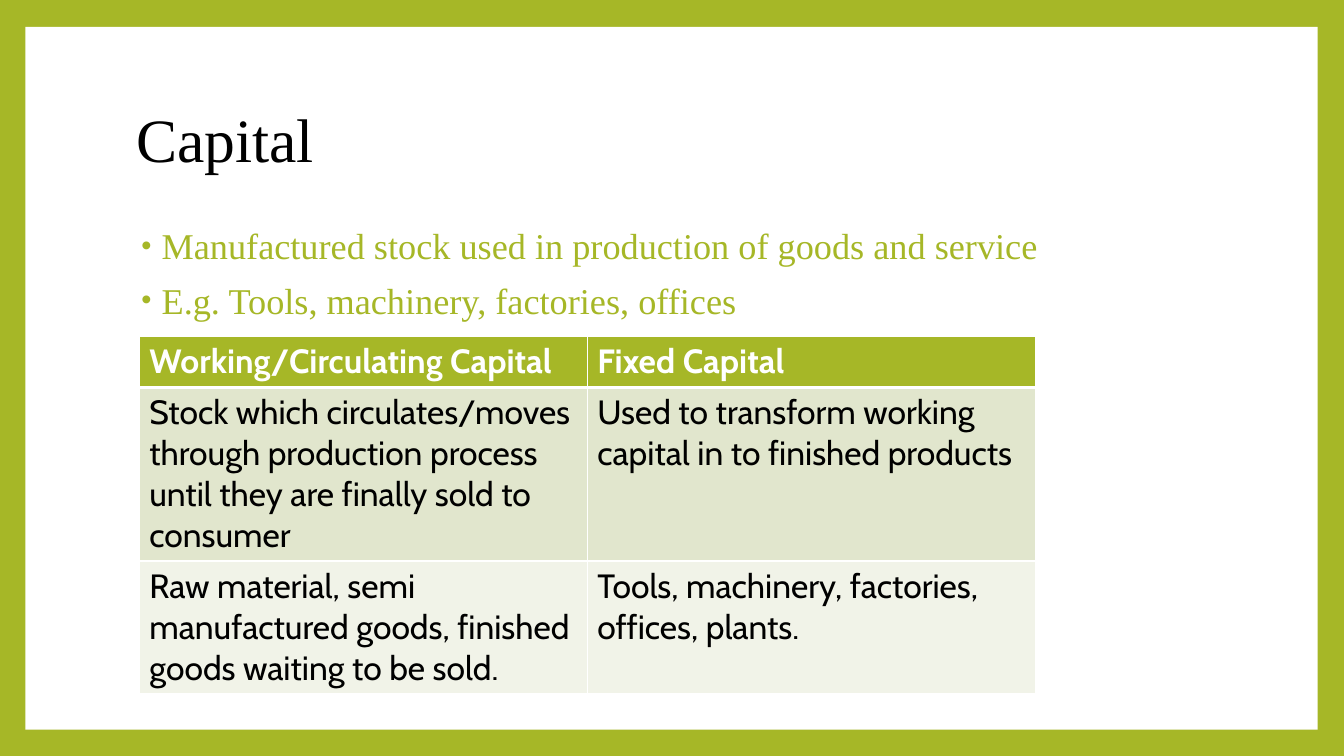
from lxml.etree import SubElement as Sub
from pptx import Presentation
from pptx.dml.color import RGBColor
from pptx.enum.shapes import MSO_SHAPE as Shape
from pptx.enum.text import MSO_ANCHOR as Anchor, MSO_AUTO_SIZE as Fit, PP_ALIGN as Align
from pptx.oxml.ns import qn
from pptx.util import Cm, Pt

GREEN, WHITE, BLACK = "A6B727", "FFFFFF", "000000"
SERIF, SANS = "Times New Roman", "Cabin"

TITLE = "Capital"
POINTS = [
    "Manufactured stock used in production of goods and service",
    "E.g. Tools, machinery, factories, offices",
]
ROWS = [
    ("Working/Circulating Capital", "Fixed Capital"),
    ("Stock which circulates/moves through production process until they are finally sold to consumer",
     "Used to transform working capital in to finished products"),
    ("Raw material, semi manufactured goods, finished goods waiting to be sold.",
     "Tools, machinery, factories, offices, plants."),
]
FILLS = [GREEN, "E1E6CD", "F1F3E8"]
HEIGHTS = [1.25, 4.35, 3.3]
WIDTH = 11.29


def paint(fill, color):
    fill.solid()
    fill.fore_color.rgb = RGBColor.from_string(color)


def write(para, text, size, font, color, bold=False, lead=None, gap=None):
    para.alignment = Align.LEFT
    if lead:
        para.line_spacing = lead
    if gap is not None:
        para.space_before = Pt(gap)
    run = para.add_run()
    run.text = text
    run.font.size, run.font.name, run.font.bold = Pt(size), font, bold
    run.font.color.rgb = RGBColor.from_string(color)


def bullet(para):
    props = para._p.get_or_add_pPr()
    props.set("marL", str(Cm(0.64)))
    props.set("indent", str(-Cm(0.51)))
    tint = Sub(props, qn("a:buClr"))
    Sub(tint, qn("a:srgbClr"), val=GREEN)
    Sub(props, qn("a:buSzPct"), val="80000")
    Sub(props, qn("a:buFont"), typeface="Arial")
    Sub(props, qn("a:buChar"), char="•")


def border(cell, **widths):
    props = cell._tc.get_or_add_tcPr()
    for side in "LRTB":
        line = Sub(props, qn(f"a:ln{side}"), w=str(Pt(widths.get(side, 1))))
        fill = Sub(line, qn("a:solidFill"))
        Sub(fill, qn("a:srgbClr"), val=WHITE)


def place(shape, *box):
    shape.left, shape.top, shape.width, shape.height = map(Cm, box)


def main():
    deck = Presentation()
    deck.slide_width, deck.slide_height = Cm(33.87), Cm(19.05)
    slide = deck.slides.add_slide(deck.slide_layouts[1])
    paint(slide.background.fill, GREEN)
    title, body = slide.placeholders

    panel = slide.shapes.add_shape(Shape.RECTANGLE, Cm(0.64), Cm(0.68), Cm(32.57), Cm(17.71))
    panel.shadow.inherit = False
    paint(panel.fill, WHITE)
    panel.line.fill.background()
    slide.shapes._spTree.insert(2, panel._element)

    for shape, anchor, top, height in (
        (title, Anchor.MIDDLE, 1.7, 3.76),
        (body, Anchor.TOP, 5.72, 2.51),
    ):
        place(shape, 3.18, top, 27.43, height)
        shape.text_frame.auto_size = Fit.NONE
        shape.text_frame.vertical_anchor = anchor

    write(title.text_frame.paragraphs[0], TITLE, 44, SERIF, BLACK, lead=0.9)
    frame = body.text_frame
    for i, text in enumerate(POINTS):
        para = frame.add_paragraph() if i else frame.paragraphs[0]
        write(para, text, 25.9, SERIF, GREEN, lead=0.8, gap=14)
        bullet(para)

    grid = slide.shapes.add_table(
        len(ROWS), 2, Cm(3.51), Cm(8.48), Cm(2 * WIDTH), Cm(sum(HEIGHTS))
    ).table
    for r, texts in enumerate(ROWS):
        grid.rows[r].height = Cm(HEIGHTS[r])
        head = r == 0
        for c, text in enumerate(texts):
            cell = grid.cell(r, c)
            border(cell, B=3 if head else 1, T=3 if r == 1 else 1)
            paint(cell.fill, FILLS[r])
            write(cell.text_frame.paragraphs[0], text, 24, SANS,
                  WHITE if head else BLACK, bold=head)

    deck.save("out.pptx")


if __name__ == "__main__":
    main()
